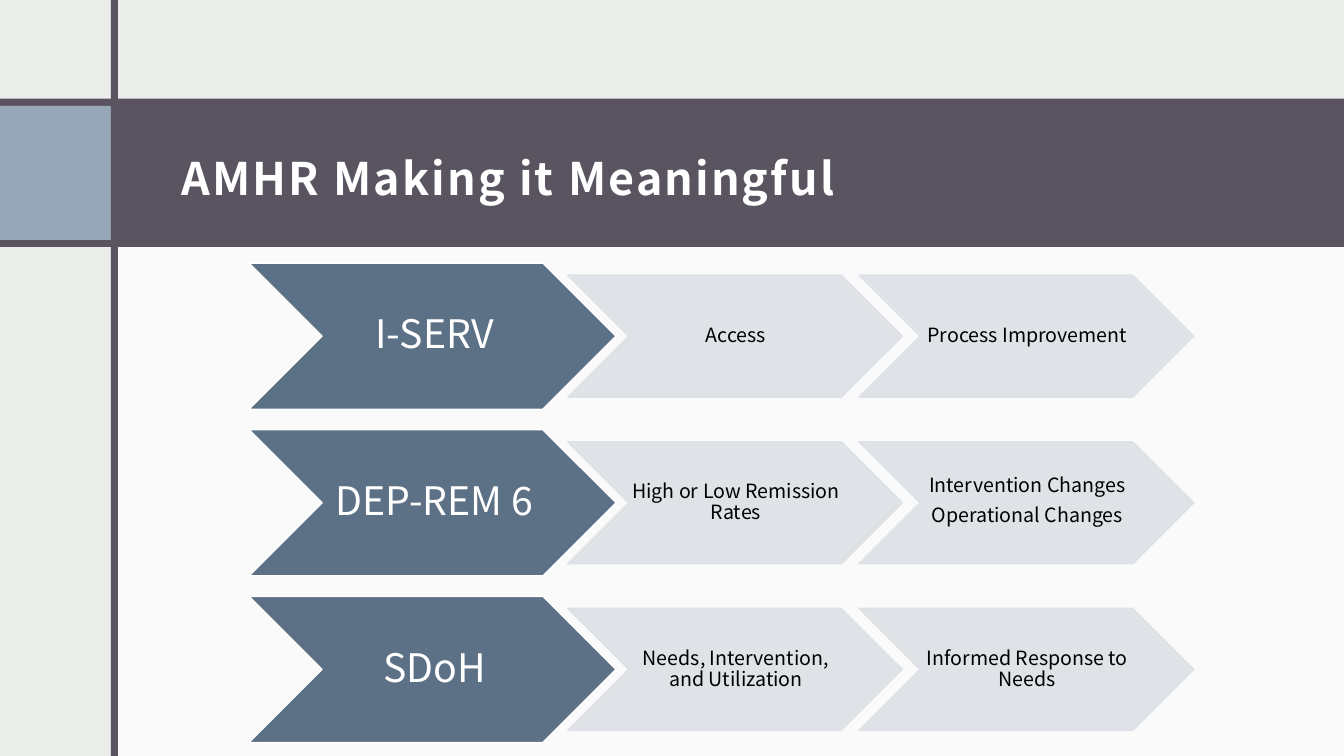
import pptx
import pptx.util
import pptx.dml.color
import pptx.enum.shapes
import pptx.enum.text
import pptx.oxml.ns
import lxml.etree
from dataclasses import dataclass

TITLE = "AMHR Making it Meaningful"
MEASURES = [
    ("I-SERV", [["Access"], ["Process Improvement"]]),
    ("DEP-REM 6", [["High or Low Remission Rates"],
                   ["Intervention Changes", "Operational Changes"]]),
    ("SDoH", [["Needs, Intervention, and Utilization"],
              ["Informed Response to Needs"]]),
]


@dataclass(frozen=True)
class Theme:
    font: str = "Noto Sans CJK JP"
    background: str = "EBEDEB"
    white: str = "FFFFFF"
    black: str = "000000"
    band: str = "595460"
    accent: str = "97A7B8"
    measure: str = "5C7086"
    detail: str = "DDE1E6"
    title_size: int = 32
    measure_size: int = 28
    detail_size: int = 14


THEME = Theme()
SHAPES = pptx.enum.shapes.MSO_SHAPE
Inches = pptx.util.Inches
Pt = pptx.util.Pt
WIDTH, HEIGHT = 13.33, 7.5
MEASURE_LEFT, MEASURE_TOP = 2.47, 2.61
MEASURE_WIDTH, MEASURE_HEIGHT = 3.64, 1.45
ROW_STEP = MEASURE_HEIGHT * 1.14
DETAIL_LEFT, DETAIL_STEP = 5.63, 2.89
DETAIL_WIDTH, DETAIL_HEIGHT = 3.32, 1.21


def rgb(code):
    return pptx.dml.color.RGBColor.from_string(code)


def set_opacity(fill, percent):
    color = fill._xPr.find(".//" + pptx.oxml.ns.qn("a:srgbClr"))
    alpha = lxml.etree.SubElement(color, pptx.oxml.ns.qn("a:alpha"))
    alpha.set("val", str(percent * 1000))


def add_block(slide, kind, box, color, opacity=100, outline=None):
    block = slide.shapes.add_shape(kind, *map(Inches, box))
    block.shadow.inherit = False
    block.fill.solid()
    block.fill.fore_color.rgb = rgb(color)
    if outline:
        block.line.color.rgb = rgb(outline)
        block.line.width = Pt(1)
    else:
        block.line.fill.background()
    if opacity < 100:
        set_opacity(block.fill, opacity)
        if outline:
            set_opacity(block.line.fill, opacity)
    return block


def write(shape, lines, size, color, insets, align, spacing=1.0, after=0, bold=False):
    frame = shape.text_frame
    frame.word_wrap = True
    frame.vertical_anchor = pptx.enum.text.MSO_ANCHOR.MIDDLE
    (frame.margin_left, frame.margin_top,
     frame.margin_right, frame.margin_bottom) = map(Inches, insets)
    frame.text = "\n".join(lines)
    for paragraph in frame.paragraphs:
        paragraph.alignment = align
        paragraph.line_spacing = spacing
        paragraph.space_after = Pt(after)
        for run in paragraph.runs:
            run.font.name = THEME.font
            run.font.size = Pt(size)
            run.font.bold = bold
            run.font.color.rgb = rgb(color)
            east_asian = lxml.etree.SubElement(run.font._element, pptx.oxml.ns.qn("a:ea"))
            east_asian.set("typeface", THEME.font)


def add_frame(slide):
    blocks = [
        ((1.14, 2.33, WIDTH - 1.14, HEIGHT - 2.33), THEME.white, 75),
        ((0, 0.98, WIDTH, 1.47), THEME.band, 100),
        ((0, 1.05, 1.1, 1.33), THEME.accent, 100),
        ((1.1, 0, 0.07, HEIGHT), THEME.band, 100),
    ]
    for box, color, opacity in blocks:
        add_block(slide, SHAPES.RECTANGLE, box, color, opacity)


def add_title(slide):
    title = slide.shapes.add_textbox(*map(Inches, (1.68, 1.05, 10.95, 1.33)))
    write(title, [TITLE], THEME.title_size, THEME.white, (0.12, 0.2, 0.12, 0.1),
          pptx.enum.text.PP_ALIGN.LEFT, bold=True)
    title.text_frame.paragraphs[0].runs[0].font._element.set("spc", "150")


def add_measures(slide):
    center = pptx.enum.text.PP_ALIGN.CENTER
    for row, (name, details) in enumerate(MEASURES):
        top = MEASURE_TOP + row * ROW_STEP
        measure = add_block(slide, SHAPES.CHEVRON,
                            (MEASURE_LEFT, top, MEASURE_WIDTH, MEASURE_HEIGHT),
                            THEME.measure, outline=THEME.white)
        write(measure, [name], THEME.measure_size, THEME.white,
              (0.04, 0.02, 0, 0.02), center, 0.9)
        detail_top = top + (MEASURE_HEIGHT - DETAIL_HEIGHT) / 2
        for column, lines in enumerate(details):
            detail = add_block(slide, SHAPES.CHEVRON,
                               (DETAIL_LEFT + column * DETAIL_STEP, detail_top,
                                DETAIL_WIDTH, DETAIL_HEIGHT),
                               THEME.detail, 90, THEME.detail)
            several = len(lines) > 1
            write(detail, lines, THEME.detail_size, THEME.black,
                  (0.02, 0.01, 0, 0.01), center,
                  0.7 if several else 0.9, 10 if several else 0)


def main():
    deck = pptx.Presentation()
    deck.slide_width, deck.slide_height = Inches(WIDTH), Inches(HEIGHT)
    slide = deck.slides.add_slide(deck.slide_layouts[6])
    slide.background.fill.solid()
    slide.background.fill.fore_color.rgb = rgb(THEME.background)
    add_frame(slide)
    add_title(slide)
    add_measures(slide)
    deck.save("out.pptx")


if __name__ == "__main__":
    main()
